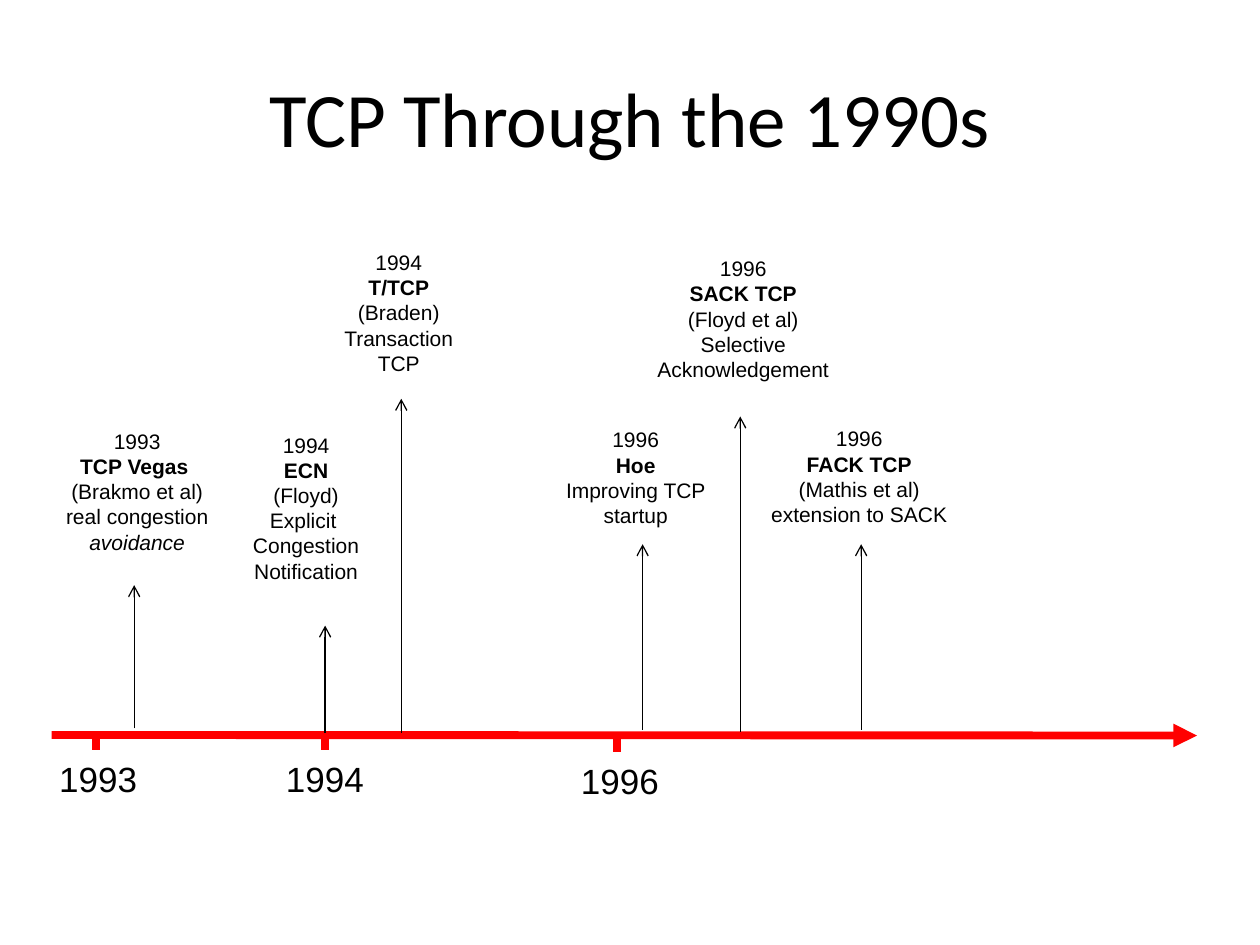
from pptx import Presentation
from pptx.util import Pt
from pptx.dml.color import RGBColor
from pptx.enum.shapes import MSO_CONNECTOR as CONN
from pptx.enum.text import PP_ALIGN as ALIGN, MSO_ANCHOR as ANCHOR, MSO_AUTO_SIZE as AUTO
from pptx.oxml.ns import qn
from lxml.etree import SubElement

COLORS = {"text": "000000", "axis": "FF0000", "paper": "FFFFFF"}


class TimelineSlide:
    """Holds the style and the current slide."""

    def __init__(self, prs):
        self.s = prs.slides.add_slide(prs.slide_layouts[5])
        fill = self.s.background.fill
        fill.solid()
        fill.fore_color.rgb = self.color("paper")

    def color(self, name):
        return RGBColor.from_string(COLORS[name])

    def style(self, r, size, font="Arial", bold=False, italic=False):
        r.font.size, r.font.name = Pt(size), font
        r.font.bold, r.font.italic = bold, italic
        r.font.color.rgb = self.color("text")

    def title(self, text, x, y, w, h):
        sp = self.s.shapes.title
        sp.left, sp.top, sp.width, sp.height = Pt(x), Pt(y), Pt(w), Pt(h)
        tf = sp.text_frame
        tf.text = text
        tf.vertical_anchor = ANCHOR.MIDDLE
        p = tf.paragraphs[0]
        p.alignment = ALIGN.CENTER
        self.style(p.runs[0], 44, "Calibri")

    def label(self, lines, x, y, w, h, size=12, wrap=False, italic_end=None):
        """Centred text whose second line is bold; italic_end closes the last line."""
        tf = self.s.shapes.add_textbox(Pt(x), Pt(y), Pt(w), Pt(h)).text_frame
        tf.text = "\n".join(lines)
        tf.word_wrap = wrap
        tf.auto_size = AUTO.SHAPE_TO_FIT_TEXT
        for i, p in enumerate(tf.paragraphs):
            p.alignment = ALIGN.CENTER
            self.style(p.runs[0], size, bold=i == 1)
        if italic_end:
            r = p.add_run()
            r.text = italic_end
            self.style(r, size, italic=True)

    def line(self, x1, y1, x2, y2, color="text", width=0.75, head=None):
        c = self.s.shapes.add_connector(CONN.STRAIGHT, Pt(x1), Pt(y1), Pt(x2), Pt(y2))
        c.line.color.rgb = self.color(color)
        c.line.width = Pt(width)
        if head:
            SubElement(c.line._get_or_add_ln(), qn("a:tailEnd"), type=head)
        SubElement(c._element.spPr, qn("a:effectLst"))


# Years: text, tick x, tick top, label left, label top
YEARS = [
    ("1993", 54.7, 419.8, 26.6, 429.1),
    ("1994", 185.8, 419.8, 156.2, 429.1),
    ("1996", 352.8, 421.2, 324.7, 430.6),
]

# Events: lines, label box, wrap, italic ending, arrow (x, bottom, top)
EVENTS = [
    (["1994", "ECN", "(Floyd)", "Explicit ", "Congestion", "Notification"],
     (137.5, 243.4, 74.9, 93.6), False, None, (185.8, 419, 357.5)),
    (["1993", "TCP Vegas ", "(Brakmo et al)", "real congestion "],
     (12.2, 241.2, 132.5, 79.2), True, "avoidance", (76.7, 416.2, 334.4)),
    (["1994", "T/TCP", "(Braden)", "Transaction", "TCP"],
     (189.4, 139, 77, 79.2), False, None, (229.3, 419, 227.9)),
    (["1996", "SACK TCP", "(Floyd et al)", "Selective Acknowledgement"],
     (361.4, 142.6, 126.7, 79.2), True, None, (423, 418.3, 238)),
    (["1996", "Hoe", "Improving TCP startup"],
     (302.4, 240.5, 121.7, 64.8), True, None, (367.2, 417, 311)),
    (["1996", "FACK TCP", "(Mathis et al)", "extension to SACK"],
     (418.3, 239.8, 145.4, 64.8), True, None, (492.1, 417, 311)),
]


def main():
    prs = Presentation()
    prs.slide_width, prs.slide_height = Pt(720), Pt(540)
    slide = TimelineSlide(prs)
    slide.title("TCP Through the 1990s", 36, 21.6, 648, 90)

    # Time axis with its year ticks
    slide.line(29.5, 420, 684, 420.3, "axis", 4.5, "triangle")
    for year, x, y, left, top in YEARS:
        slide.line(x, y, x, y + 8.6, "axis", 4.5)
        slide.label([year], left, top, 59, 31, size=20)

    # Events, each with an arrow up from the axis
    for lines, box, wrap, ending, (x, bottom, top) in EVENTS:
        slide.line(x, bottom, x, top, head="arrow")
        slide.label(lines, *box, wrap=wrap, italic_end=ending)

    prs.save("out.pptx")


if __name__ == "__main__":
    main()
